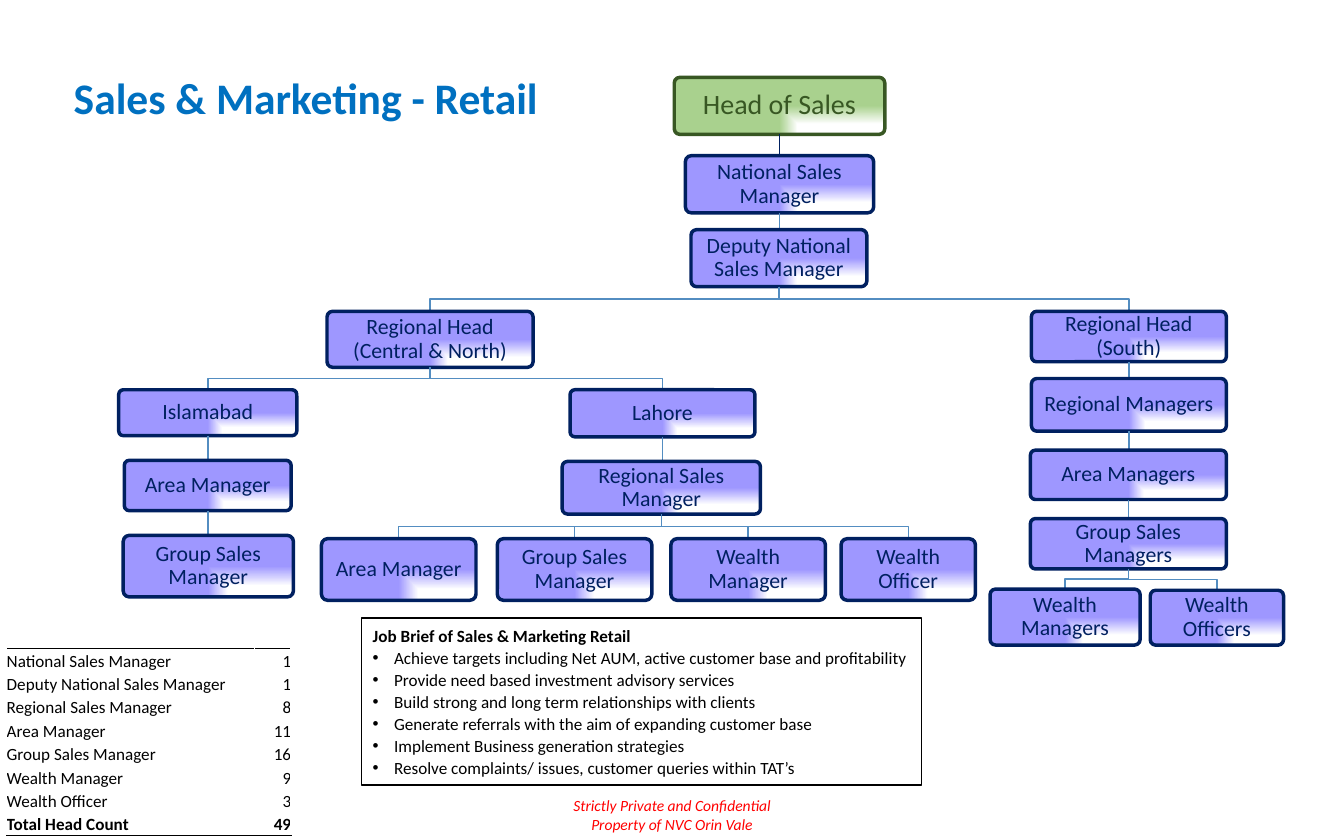
"""Build the retail sales and marketing organisation chart slide."""
from dataclasses import dataclass

from lxml.etree import SubElement
from pptx import Presentation
from pptx.dml.color import RGBColor
from pptx.enum.shapes import MSO_CONNECTOR, MSO_SHAPE
from pptx.enum.text import MSO_ANCHOR, PP_ALIGN
from pptx.oxml import parse_xml
from pptx.oxml.ns import nsdecls, qn
from pptx.util import Inches, Pt


@dataclass(frozen=True)
class Theme:
    font: str = "Calibri"
    title: str = "0070C0"
    navy: str = "002060"
    violet: str = "9E97FF"
    dark_green: str = "385723"
    green: str = "A9D18E"
    link: str = "538DC1"
    black: str = "000000"
    white: str = "FFFFFF"
    red: str = "FF0000"
    title_size: float = 28
    head_size: float = 18
    node_size: float = 14
    body_size: float = 11
    note_size: float = 10


@dataclass(frozen=True)
class Node:
    text: str
    x: float
    y: float
    w: float
    h: float
    children: tuple["Node", ...] = ()

    @property
    def center(self) -> float:
        return self.x + self.w / 2


T = Theme()

ISLAMABAD = Node("Islamabad", 1.06, 3.48, 1.59, 0.41, (
    Node("Area Manager", 1.11, 4.11, 1.49, 0.45, (
        Node("Group Sales Manager", 1.1, 4.78, 1.52, 0.55),)),))
LAHORE = Node("Lahore", 5.09, 3.48, 1.65, 0.42, (
    Node("Regional Sales Manager", 5.02, 4.12, 1.77, 0.47, (
        Node("Area Manager", 2.87, 4.81, 1.38, 0.55),
        Node("Group Sales Manager", 4.44, 4.81, 1.38, 0.55),
        Node("Wealth Manager", 5.99, 4.81, 1.38, 0.55),
        Node("Wealth Officer", 7.51, 4.81, 1.2, 0.55))),))
SOUTH = Node("Regional Head (South)", 9.21, 2.78, 1.74, 0.45, (
    Node("Regional Managers", 9.21, 3.38, 1.74, 0.47, (
        Node("Area Managers", 9.2, 4.02, 1.75, 0.44, (
            Node("Group Sales Managers", 9.2, 4.63, 1.75, 0.45, (
                Node("Wealth Managers", 8.84, 5.26, 1.34, 0.5),
                Node("Wealth Officers", 10.27, 5.27, 1.19, 0.49))),)),)),))
CENTRAL = Node("Regional Head (Central & North)", 2.92, 2.78, 1.84, 0.5,
               (ISLAMABAD, LAHORE))
DEPUTY = Node("Deputy National Sales Manager", 6.17, 2.05, 1.57, 0.51,
              (CENTRAL, SOUTH))
NATIONAL = Node("National Sales Manager", 6.12, 1.39, 1.68, 0.51, (DEPUTY,))
HEAD = Node("Head of Sales", 6.02, 0.69, 1.88, 0.51, (NATIONAL,))

HEAD_COUNT = (
    ("National Sales Manager", 1),
    ("Deputy National Sales Manager", 1),
    ("Regional Sales Manager", 8),
    ("Area Manager", 11),
    ("Group Sales Manager", 16),
    ("Wealth Manager", 9),
    ("Wealth Officer", 3),
    ("Total Head Count", 49),
)
JOB_BRIEF = (
    "Achieve targets including Net AUM, active customer base and profitability",
    "Provide need based investment advisory services",
    "Build strong and long term relationships with clients",
    "Generate referrals with the aim of expanding customer base",
    "Implement Business generation strategies",
    "Resolve complaints/ issues, customer queries within TAT’s",
)


def rgb(color: str) -> RGBColor:
    return RGBColor.from_string(color)


def add_text(tf, text: str, *, size: float, color: str = T.black, bold=False,
             italic=False, align=PP_ALIGN.LEFT, spacing=1.0, bullet=False) -> None:
    p = tf.paragraphs[0]
    if p.runs:
        p = tf.add_paragraph()
    p.alignment, p.line_spacing = align, spacing
    if bullet:
        pPr = p._p.get_or_add_pPr()
        pPr.set("marL", str(Inches(0.19)))
        pPr.set("indent", str(-Inches(0.19)))
        SubElement(pPr, qn("a:buFont"), typeface="Arial")
        SubElement(pPr, qn("a:buChar"), char="•")
    r = p.add_run()
    r.text = text
    r.font.name, r.font.size = T.font, Pt(size)
    r.font.bold, r.font.italic = bold, italic
    r.font.color.rgb = rgb(color)


def set_margins(target, size: float) -> None:
    target.margin_left = target.margin_right = Inches(size)
    target.margin_top = target.margin_bottom = Inches(size)


def fill_corner_gradient(sp, color: str) -> None:
    stops = "".join(
        f'<a:gs pos="{pos}"><a:srgbClr val="{c}"/></a:gs>'
        for pos, c in ((0, T.white), (36000, T.white), (100000, color)))
    grad = parse_xml(
        f'<a:gradFill {nsdecls("a")} rotWithShape="1"><a:gsLst>{stops}</a:gsLst>'
        '<a:path path="rect"><a:fillToRect l="100000" t="100000"/></a:path>'
        '</a:gradFill>')
    sp._element.spPr.find(qn("a:prstGeom")).addnext(grad)


def add_link(s, parent: Node, child: Node, color: str) -> None:
    x1, x2 = Inches(parent.center), Inches(child.center)
    y1, y2 = Inches(parent.y + parent.h), Inches(child.y)
    if abs(x2 - x1) < Inches(0.03):
        sp = s.shapes.add_connector(MSO_CONNECTOR.STRAIGHT, x1, y1, x1, y2)
        SubElement(sp._element.spPr, qn("a:effectLst"))
    else:
        mid = (y1 + y2) // 2
        elbow = s.shapes.build_freeform(x1, y1)
        elbow.add_line_segments([(x1, mid), (x2, mid), (x2, y2)], close=False)
        sp = elbow.convert_to_shape()
        sp.fill.background()
        sp.shadow.inherit = False
    sp.line.color.rgb, sp.line.width = rgb(color), Pt(1)


def add_node(s, node: Node, is_head: bool = False) -> None:
    ink = T.dark_green if is_head else T.navy
    sp = s.shapes.add_shape(MSO_SHAPE.ROUNDED_RECTANGLE, Inches(node.x),
                            Inches(node.y), Inches(node.w), Inches(node.h))
    sp.adjustments[0] = 0.1
    sp.shadow.inherit = False
    fill_corner_gradient(sp, T.green if is_head else T.violet)
    sp.line.color.rgb, sp.line.width = rgb(ink), Pt(2.25)
    tf = sp.text_frame
    tf.word_wrap, tf.vertical_anchor = True, MSO_ANCHOR.MIDDLE
    set_margins(tf, 0.07)
    add_text(tf, node.text, size=T.head_size if is_head else T.node_size,
             color=ink, align=PP_ALIGN.CENTER, spacing=0.9)
    for child in node.children:
        add_link(s, node, child, T.navy if is_head else T.link)
        add_node(s, child)


def add_textbox(s, x: float, y: float, w: float, h: float, wrap: bool = True):
    tf = s.shapes.add_textbox(Inches(x), Inches(y), Inches(w), Inches(h)).text_frame
    tf.word_wrap = wrap
    return tf


def add_border(cell, side: str) -> None:
    cell._tc.get_or_add_tcPr().insert(0, parse_xml(
        f'<a:{side} {nsdecls("a")} w="{Pt(1)}"><a:solidFill>'
        f'<a:srgbClr val="{T.black}"/></a:solidFill></a:{side}>'))


def add_head_count(s) -> None:
    last = len(HEAD_COUNT) - 1
    table = s.shapes.add_table(len(HEAD_COUNT), 2, Inches(0.06), Inches(5.79),
                               Inches(2.54), Inches(1.67)).table
    table.first_row = table.horz_banding = False
    for column, width in zip(table.columns, (2.21, 0.33)):
        column.width = Inches(width)
    for i, row in enumerate(HEAD_COUNT):
        for j, value in enumerate(row):
            cell = table.cell(i, j)
            cell.fill.background()
            cell.vertical_anchor = MSO_ANCHOR.BOTTOM
            set_margins(cell, 0)
            add_text(cell.text_frame, str(value), size=T.body_size, bold=i == last,
                     align=PP_ALIGN.RIGHT if j else PP_ALIGN.LEFT)
            if i in (0, last):
                add_border(cell, "lnB" if i else "lnT")


def add_job_brief(s) -> None:
    sp = s.shapes.add_shape(MSO_SHAPE.RECTANGLE, Inches(3.23), Inches(5.52),
                            Inches(5), Inches(1.49))
    sp.shadow.inherit = False
    sp.fill.solid()
    sp.fill.fore_color.rgb = rgb(T.white)
    sp.line.color.rgb, sp.line.width = rgb(T.black), Pt(1)
    tf = sp.text_frame
    tf.word_wrap, tf.vertical_anchor = True, MSO_ANCHOR.TOP
    add_text(tf, "Job Brief of Sales & Marketing Retail", size=T.body_size,
             bold=True, spacing=1.07)
    for duty in JOB_BRIEF:
        add_text(tf, duty, size=T.body_size, spacing=1.07, bullet=True)


def main() -> None:
    prs = Presentation()
    prs.slide_width, prs.slide_height = Inches(12), Inches(7.5)
    s = prs.slides.add_slide(prs.slide_layouts[6])
    notice = add_textbox(s, 5.01, 7.06, 1.98, 0.44, wrap=False)
    for line in ("Strictly Private and Confidential", "Property of NVC Orin Vale"):
        add_text(notice, line, size=T.note_size, color=T.red, italic=True,
                 align=PP_ALIGN.CENTER)
    title = add_textbox(s, 0.56, 0.5, 10.35, 0.8)
    title.vertical_anchor = MSO_ANCHOR.MIDDLE
    add_text(title, "Sales & Marketing - Retail", size=T.title_size,
             color=T.title, bold=True, spacing=0.9)
    add_node(s, HEAD, is_head=True)
    add_head_count(s)
    add_job_brief(s)
    prs.save("out.pptx")


if __name__ == "__main__":
    main()
